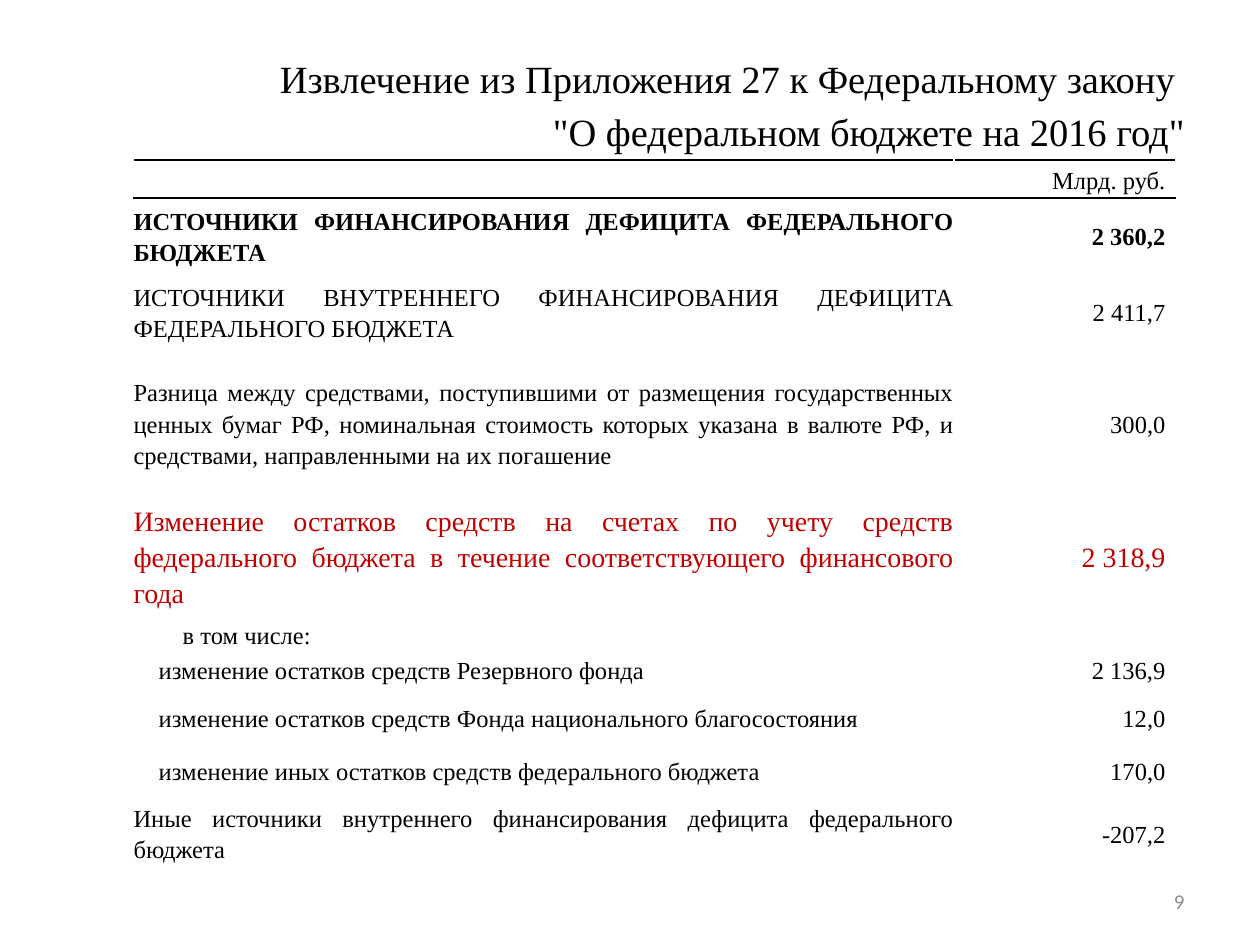
import pptx
import pptx.util
import pptx.dml.color
import pptx.enum.text
import pptx.oxml
import pptx.oxml.ns

Inches = pptx.util.Inches
Pt = pptx.util.Pt
Align = pptx.enum.text.PP_ALIGN
MIDDLE = pptx.enum.text.MSO_ANCHOR.MIDDLE
BLACK = pptx.dml.color.RGBColor(0x00, 0x00, 0x00)
RED = pptx.dml.color.RGBColor(0xC0, 0x00, 0x00)
GRAY = pptx.dml.color.RGBColor(0x8C, 0x8C, 0x8C)
SERIF = "Times New Roman"

TITLE = ["Извлечение из Приложения 27 к Федеральному закону ",
         '"О федеральном бюджете на 2016 год"']
COLUMN_WIDTHS = [6.51, 1.76]
PLAIN = {}
BOLD = {"bold": True}
ACCENT = {"size": 16, "color": RED}
DETAIL = {"indent": 0.2, "spacing": 1.0}
ROWS = [
    (0.3, "", "Млрд. руб.", PLAIN),
    (0.6, "ИСТОЧНИКИ ФИНАНСИРОВАНИЯ ДЕФИЦИТА ФЕДЕРАЛЬНОГО БЮДЖЕТА", "2 360,2", BOLD),
    (0.6, "ИСТОЧНИКИ ВНУТРЕННЕГО ФИНАНСИРОВАНИЯ ДЕФИЦИТА ФЕДЕРАЛЬНОГО БЮДЖЕТА",
     "2 411,7", PLAIN),
    (1.17, "Разница между средствами, поступившими от размещения государственных "
     "ценных бумаг РФ, номинальная стоимость которых указана в валюте РФ, и "
     "средствами, направленными на их погашение", "300,0", PLAIN),
    (0.94, "Изменение остатков средств на счетах по учету средств федерального "
     "бюджета в течение соответствующего финансового года", "2 318,9", ACCENT),
    (0.3, "в том числе:", "", {"indent": 0.39}),
    (0.3, "изменение остатков средств Резервного фонда", "2 136,9", DETAIL),
    (0.46, "изменение остатков средств Фонда национального благосостояния", "12,0", DETAIL),
    (0.37, "изменение иных остатков средств федерального бюджета", "170,0", DETAIL),
    (0.6, "Иные источники внутреннего финансирования дефицита федерального бюджета",
     "-207,2", PLAIN),
]


def write(paragraph, text, align, size=14, color=BLACK, bold=False, font=SERIF, spacing=1.15):
    """Fill a paragraph with one formatted run."""
    paragraph.alignment = align
    paragraph.line_spacing = spacing
    run = paragraph.add_run()
    run.text = text
    run.font.name = font
    run.font.size = Pt(size)
    run.font.bold = bold
    run.font.color.rgb = color


def add_text(slide, left, top, width, height, lines, **style):
    """Add a right-aligned text box with one paragraph per line."""
    shape = slide.shapes.add_textbox(Inches(left), Inches(top), Inches(width), Inches(height))
    frame = shape.text_frame
    frame.word_wrap = True
    frame.vertical_anchor = MIDDLE
    for index, line in enumerate(lines):
        paragraph = frame.add_paragraph() if index else frame.paragraphs[0]
        write(paragraph, line, Align.RIGHT, **style)


def add_borders(cell, edges):
    """Draw thin black rules on the named edges of a cell."""
    properties = cell._tc.get_or_add_tcPr()
    for index, edge in enumerate(edges):
        line = pptx.oxml.parse_xml(
            f'<a:ln{edge} {pptx.oxml.ns.nsdecls("a")} w="{Pt(1)}"><a:solidFill>'
            f'<a:srgbClr val="{BLACK}"/></a:solidFill></a:ln{edge}>')
        properties.insert(index, line)


def fill_cell(cell, text, align, right_margin, indent=0, **style):
    """Write one transparent, vertically centred table cell."""
    cell.fill.background()
    cell.vertical_anchor = MIDDLE
    cell.margin_left = cell.margin_top = cell.margin_bottom = 0
    cell.margin_right = Inches(right_margin)
    paragraph = cell.text_frame.paragraphs[0]
    paragraph.space_after = Pt(5)
    write(paragraph, text, align, **style)
    if indent:
        paragraph._p.get_or_add_pPr().set("marL", str(Inches(indent)))


def add_budget_table(slide, left, top):
    """Add the table of deficit financing sources."""
    height = sum(row[0] for row in ROWS)
    table = slide.shapes.add_table(
        len(ROWS), len(COLUMN_WIDTHS), Inches(left), Inches(top),
        Inches(sum(COLUMN_WIDTHS)), Inches(height)).table
    table.first_row = table.horz_banding = False
    for column, width in zip(table.columns, COLUMN_WIDTHS):
        column.width = Inches(width)
    for index, (row_height, label, amount, style) in enumerate(ROWS):
        table.rows[index].height = Inches(row_height)
        label_cell, amount_cell = table.rows[index].cells
        fill_cell(label_cell, label, Align.JUSTIFY, 0, **style)
        amount_style = {**style, "indent": 0}
        fill_cell(amount_cell, amount, Align.RIGHT, 0.08, **amount_style)
    for row, edges in ((0, "TB"), (1, "T")):
        for cell in table.rows[row].cells:
            add_borders(cell, edges)


def main():
    """Build and save the slide."""
    presentation = pptx.Presentation()
    presentation.slide_width = Inches(10)
    presentation.slide_height = Inches(7.5)
    slide = presentation.slides.add_slide(presentation.slide_layouts[6])
    add_text(slide, 0.5, 0.3, 9, 1.01, TITLE, size=22)
    add_budget_table(slide, 1.06, 1.27)
    add_text(slide, 7.17, 6.95, 2.33, 0.4, ["9"], size=12, color=GRAY,
             font="Calibri", spacing=1.0)
    presentation.save("out.pptx")


if __name__ == "__main__":
    main()
